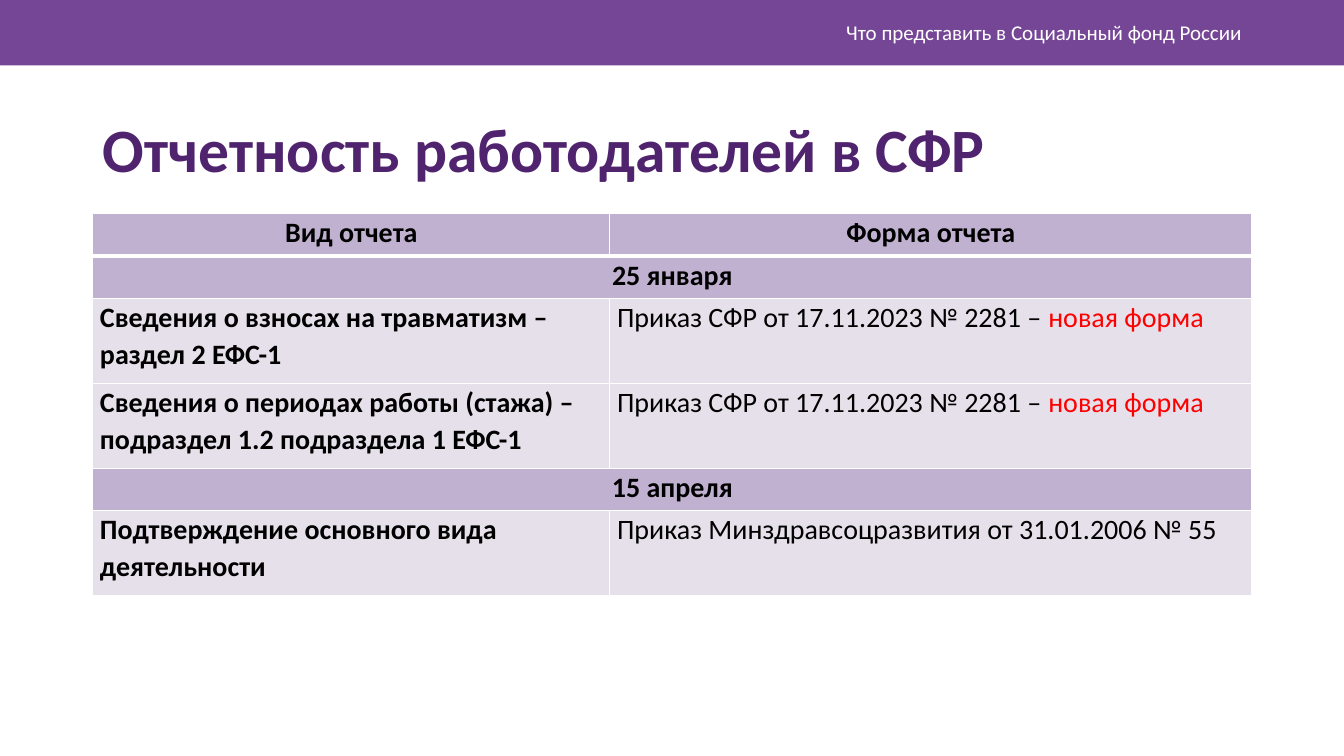
"""Build a slide listing employers' reports to the Social Fund."""
from lxml.etree import SubElement
from pptx import Presentation
from pptx.dml.color import RGBColor
from pptx.enum.shapes import MSO_SHAPE as Shape
from pptx.enum.text import MSO_ANCHOR as Anchor, MSO_AUTO_SIZE as AutoSize, PP_ALIGN as Align
from pptx.oxml.ns import qn
from pptx.util import Cm, Pt

TOPIC = "Что представить в Социальный фонд России"
TITLE = "Отчетность работодателей в СФР"
ORDER = "Приказ СФР от 17.11.2023 № 2281 – "
NEW_FORM = "новая форма"
HEADER = ("Вид отчета", "Форма отчета")
SECTIONS = [
    ("25 января", [
        ("Сведения о взносах на травматизм – раздел 2 ЕФС-1", ORDER, NEW_FORM),
        ("Сведения о периодах работы (стажа) – подраздел 1.2 подраздела 1 ЕФС-1", ORDER, NEW_FORM),
    ]),
    ("15 апреля", [
        ("Подтверждение основного вида деятельности",
         "Приказ Минздравсоцразвития от 31.01.2006 № 55", ""),
    ]),
]

FONT = "Calibri"
WHITE, BLACK, RED = "FFFFFF", "000000", "FF0000"
BAND, TITLE_COLOR, HEADING_FILL, REPORT_FILL = "764696", "50236E", "987DB3", "E6E0EB"
HEADING_OPACITY = 60
SLIDE_WIDTH, SLIDE_HEIGHT = Cm(33.87), Cm(19.05)
LEFT, CONTENT_WIDTH = Cm(2.34), Cm(29.21)
COLUMN_WIDTHS = (Cm(13.03), Cm(16.18))
HEADING_HEIGHT, REPORT_HEIGHT = Cm(1.07), Cm(2.14)


def color(value):
    return RGBColor.from_string(value)


def format_font(font, size, value, bold=False):
    font.name, font.size, font.bold = FONT, Pt(size), bold
    font.color.rgb = color(value)


def add_borders(cell, bottom_width):
    properties = cell._tc.get_or_add_tcPr()
    for side, width in (("L", 1), ("R", 1), ("T", 1), ("B", bottom_width)):
        line = SubElement(properties, qn(f"a:ln{side}"), w=str(Pt(width)))
        SubElement(SubElement(line, qn("a:solidFill")), qn("a:srgbClr"), val=WHITE)


def format_cell(cell, fill, bottom_width=1):
    cell.margin_left = cell.margin_right = Cm(0.18)
    cell.margin_top = cell.margin_bottom = 0
    add_borders(cell, bottom_width)
    cell.fill.solid()
    cell.fill.fore_color.rgb = color(fill)
    if fill == HEADING_FILL:
        fill_color = cell._tc.tcPr.find(qn("a:solidFill"))[0]
        SubElement(fill_color, qn("a:alpha"), val=str(HEADING_OPACITY * 1000))


def write_cell(cell, runs, align=Align.LEFT):
    paragraph = cell.text_frame.paragraphs[0]
    paragraph.alignment, paragraph.line_spacing = align, 1.07
    for text, value, bold in runs:
        run = paragraph.add_run()
        run.text = text
        format_font(run.font, 20, value, bold)


def add_band(slide):
    band = slide.shapes.add_shape(Shape.RECTANGLE, 0, 0, SLIDE_WIDTH, Cm(1.65))
    band.shadow.inherit = False
    band.fill.solid()
    band.fill.fore_color.rgb = color(BAND)
    band.line.fill.background()
    topic = slide.shapes.add_textbox(Cm(8.99), Cm(0.3), Cm(22.56), Cm(1.02))
    frame = topic.text_frame
    frame.word_wrap, frame.vertical_anchor = True, Anchor.MIDDLE
    frame.text = TOPIC
    frame.paragraphs[0].alignment = Align.RIGHT
    format_font(frame.paragraphs[0].runs[0].font, 15, WHITE)


def add_title(slide):
    title = slide.shapes.title
    title.left, title.top, title.width, title.height = LEFT, Cm(2.87), CONTENT_WIDTH, Cm(2.2)
    frame = title.text_frame
    frame.text = TITLE
    frame.auto_size, frame.vertical_anchor = AutoSize.NONE, Anchor.TOP
    paragraph = frame.paragraphs[0]
    paragraph.alignment, paragraph.line_spacing = Align.LEFT, 0.9
    format_font(paragraph.runs[0].font, 44, TITLE_COLOR, True)


def add_reports(slide):
    rows = [HEADER]
    for date, reports in SECTIONS:
        rows += [(date,), *reports]
    heights = [REPORT_HEIGHT if len(row) == 3 else HEADING_HEIGHT for row in rows]
    table = slide.shapes.add_table(
        len(rows), len(COLUMN_WIDTHS), LEFT, Cm(5.38), CONTENT_WIDTH, sum(heights)).table
    table.horz_banding = False
    for column, width in zip(table.columns, COLUMN_WIDTHS):
        column.width = width
    for index, (row, height) in enumerate(zip(rows, heights)):
        table.rows[index].height = height
        cells = table.rows[index].cells
        is_report = len(row) == 3
        for cell in cells:
            format_cell(cell, REPORT_FILL if is_report else HEADING_FILL, 1 if index else 3)
        if is_report:
            report, order, remark = row
            write_cell(cells[0], [(report, BLACK, True)])
            write_cell(cells[1], [(order, BLACK, False)] + [(remark, RED, False)] * bool(remark))
            continue
        if len(row) == 1:
            cells[0].merge(cells[1])
        for cell, text in zip(cells, row):
            write_cell(cell, [(text, BLACK, True)], Align.CENTER)


def main():
    presentation = Presentation()
    presentation.slide_width, presentation.slide_height = SLIDE_WIDTH, SLIDE_HEIGHT
    slide = presentation.slides.add_slide(presentation.slide_layouts[5])
    add_band(slide)
    add_title(slide)
    add_reports(slide)
    presentation.save("out.pptx")


if __name__ == "__main__":
    main()
